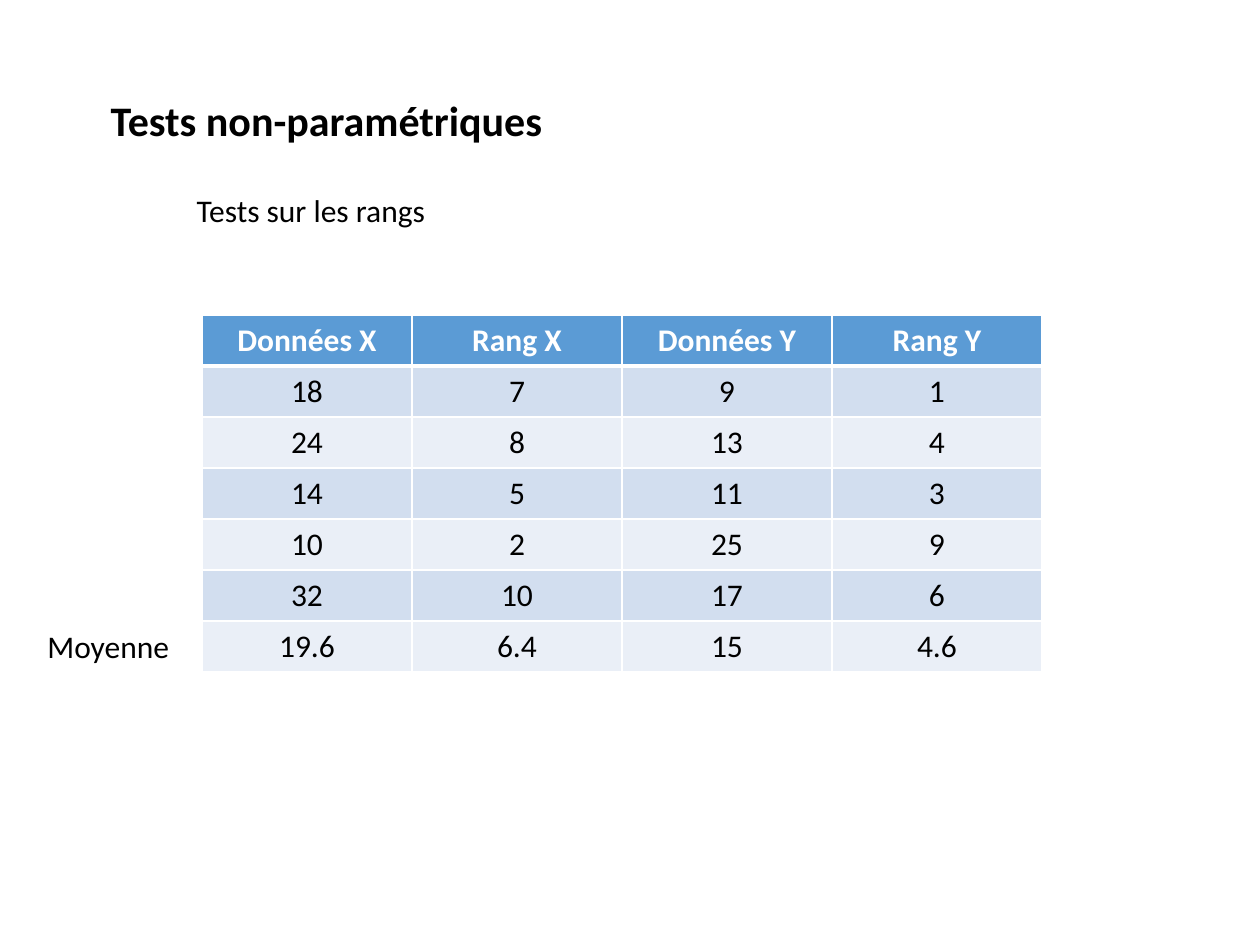
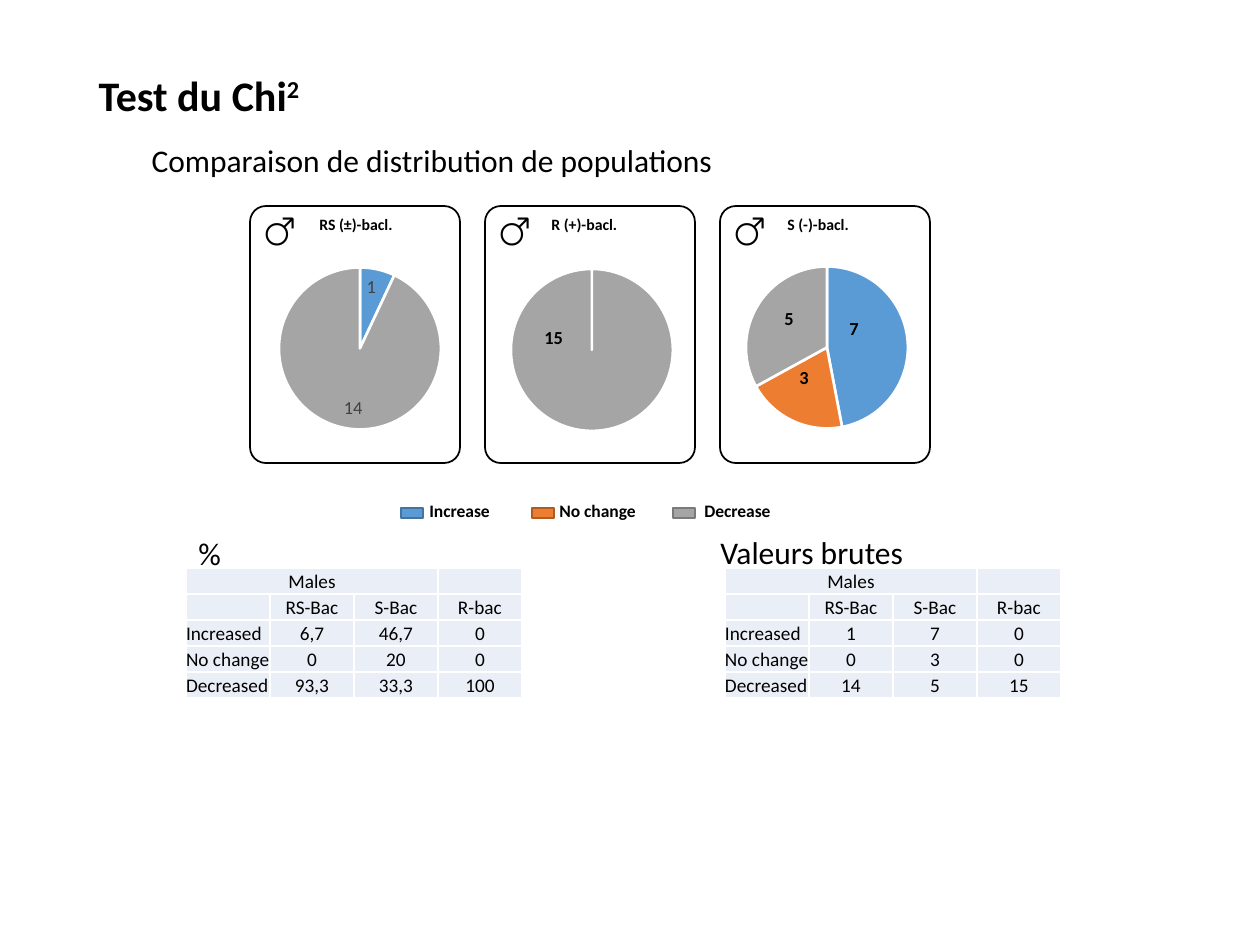
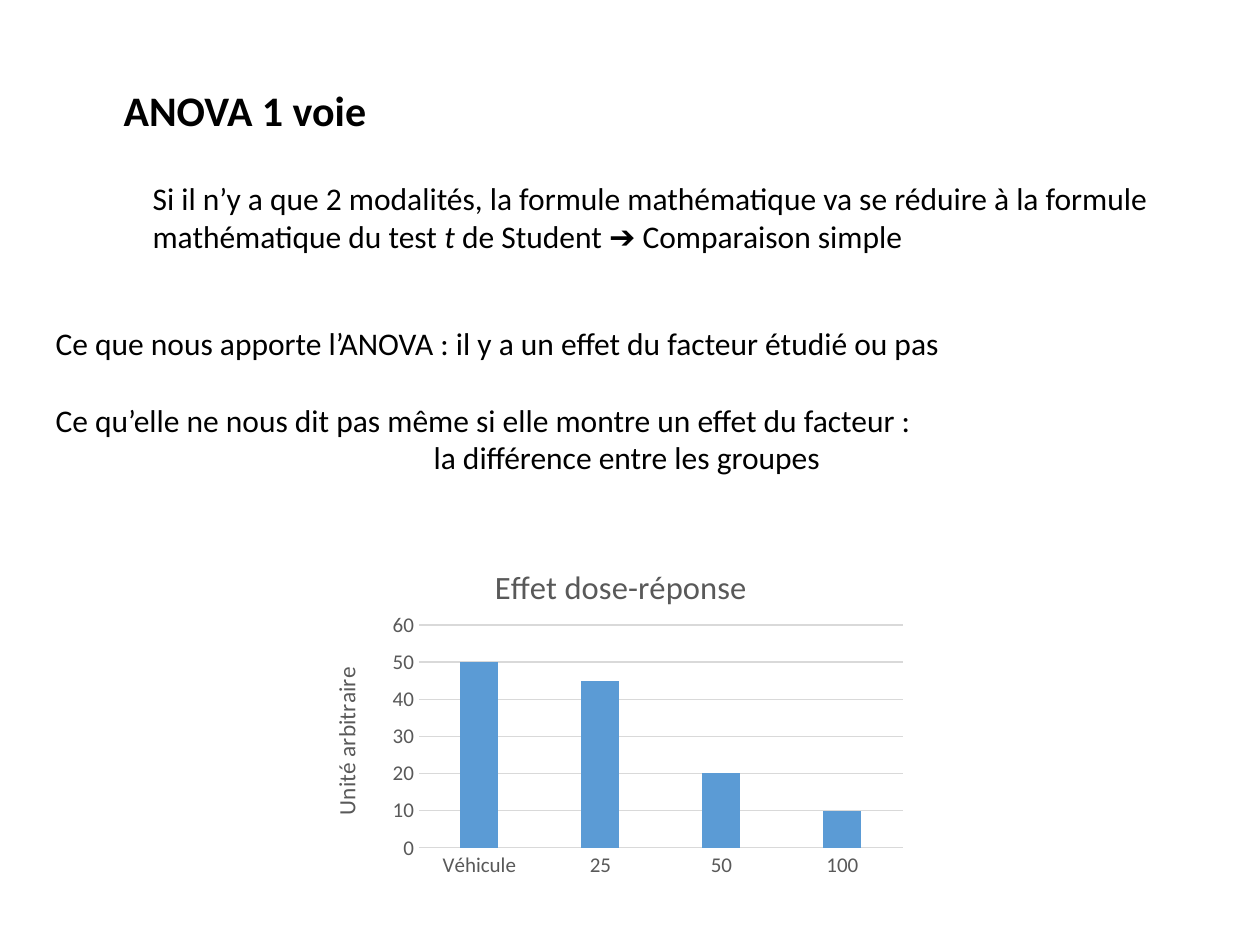
from collections import namedtuple

from lxml import etree
from pptx import Presentation
from pptx import util as u
from pptx.chart.data import CategoryChartData
from pptx.dml.color import RGBColor
from pptx.enum import chart as charts, shapes, text
from pptx.oxml.ns import qn

COLORS = {
    "black": "000000", "white": "FFFFFF", "blue": "5B9BD5", "orange": "ED7D31",
    "gray": "A5A5A5", "blue_edge": "43739E", "orange_edge": "AF5C24",
    "gray_edge": "7A7A7A", "band_dark": "D2DEEF", "band_light": "EAEFF7",
    "axis": "595959", "grid": "D9D9D9", "label": "404040",
}
FONT = "Calibri"
PX_PER_INCH = 126
ONE_CONTENT, TWO_CONTENT = 1, 3

Box = namedtuple("Box", "left top width height")


def px(length):
    return u.Emu(round(length * 914400 / PX_PER_INCH))


def place(box):
    return [px(length) for length in box]


def inside(box, left, top, width, height):
    return Box(box.left + left, box.top + top, width, height)


def rgb(name):
    return RGBColor.from_string(COLORS[name])


def style_font(font, size, color="black", bold=False, italic=False):
    font.name, font.size = FONT, u.Pt(size)
    font.bold, font.italic = bold, italic
    font.color.rgb = rgb(color)


def write_para(para, content, size=18, color="black", bold=False, align="LEFT",
               indent=0, before=0):
    """Fill a paragraph from a string or a list of (text, style) pairs."""
    para.alignment = text.PP_ALIGN[align]
    para.space_before = u.Pt(before)
    props = para._p.get_or_add_pPr()
    props.set("marL", str(px(indent)))
    props.set("indent", "0")
    etree.SubElement(props, qn("a:buNone"))
    spans = [(content, "")] if isinstance(content, str) else content
    for words, style in spans:
        span = para.add_run()
        span.text = words
        style_font(span.font, size, color, bold, style == "italic")
        if style == "super":
            span._r.get_or_add_rPr().set("baseline", "30000")


def write_box(shape, box, content, wrap=False, **style):
    """Move a text shape and write one paragraph in it."""
    shape.left, shape.top, shape.width, shape.height = place(box)
    frame = shape.text_frame
    frame.word_wrap = wrap
    frame.auto_size = text.MSO_AUTO_SIZE.SHAPE_TO_FIT_TEXT
    frame.vertical_anchor = text.MSO_ANCHOR.TOP
    write_para(frame.paragraphs[0], content, **style)
    return frame


def add_label(page, box, content, **style):
    return write_box(page.shapes.add_textbox(*place(box)), box, content, **style)


def add_page(deck, layout, title_box, title):
    page = deck.slides.add_slide(deck.slide_layouts[layout])
    write_box(page.shapes.title, title_box, title, size=24, bold=True)
    return page


def add_outline(page, kind, box, fill, line):
    shape = page.shapes.add_shape(kind, *place(box))
    shape.shadow.inherit = False
    shape.fill.solid()
    shape.fill.fore_color.rgb = rgb(fill)
    shape.line.color.rgb = rgb(line)
    shape.line.width = u.Pt(1)
    return shape


# Tables

def set_borders(cell, bottom):
    props = cell._tc.get_or_add_tcPr()
    widths = {"lnL": 1, "lnR": 1, "lnT": 1, "lnB": bottom}
    for position, (side, width) in enumerate(widths.items()):
        line = etree.Element(qn("a:" + side), w=str(u.Pt(width)))
        fill = etree.SubElement(line, qn("a:solidFill"))
        etree.SubElement(fill, qn("a:srgbClr"), val=COLORS["white"])
        props.insert(position, line)


def format_cell(cell, content, fill, bottom=1, size=18, **style):
    cell.fill.solid()
    cell.fill.fore_color.rgb = rgb(fill)
    set_borders(cell, bottom)
    para = cell.text_frame.paragraphs[0]
    if content:
        write_para(para, content, size=size, **style)
    else:
        etree.SubElement(para._p, qn("a:endParaRPr"), sz=str(size * 100))


def new_table(page, left, top, column, row, rows):
    box = Box(left, top, column * len(rows[0]), row * len(rows))
    table = page.shapes.add_table(len(rows), len(rows[0]), *place(box)).table
    for part in table.columns:
        part.width = px(column)
    for part in table.rows:
        part.height = px(row)
    return table


def add_rank_table(page, left, top, rows):
    table = new_table(page, left, top, 210, 51, rows)
    for r, row in enumerate(rows):
        for c, value in enumerate(row):
            if r == 0:
                style = dict(fill="blue", bottom=3, color="white", bold=True)
            else:
                style = dict(fill="band_dark" if r % 2 else "band_light")
            format_cell(table.cell(r, c), value, align="CENTER", **style)


def add_male_table(page, left, top, values):
    rows = [["Males", "", "", ""], ["", "RS-Bac", "S-Bac", "R-bac"]]
    names = ["Increased", "No change", "Decreased"]
    rows += [[name, *numbers] for name, numbers in zip(names, values)]
    table = new_table(page, left, top, 84, 26, rows)
    for r, row in enumerate(rows):
        for c, value in enumerate(row):
            cell = table.cell(r, c)
            cell.margin_left = cell.margin_right = 0
            cell.margin_top = cell.margin_bottom = 0
            cell.vertical_anchor = text.MSO_ANCHOR.BOTTOM
            format_cell(cell, value, "band_light", size=11,
                        align="LEFT" if r > 1 and c == 0 else "CENTER")
    table.cell(0, 0).merge(table.cell(0, 2))


# Charts

def set_layout(parent, index, chart_box, left, top, width=None, height=None):
    """Fix the place of a plot area or title, in px within its chart."""
    for old in parent.findall(qn("c:layout")):
        parent.remove(old)
    layout = etree.Element(qn("c:layout"))
    manual = etree.SubElement(layout, qn("c:manualLayout"))
    entries = {"xMode": "edge", "yMode": "edge",
               "x": left / chart_box.width, "y": top / chart_box.height}
    if width:
        etree.SubElement(manual, qn("c:layoutTarget"), val="inner")
        entries.update(w=width / chart_box.width, h=height / chart_box.height)
    for tag, value in entries.items():
        etree.SubElement(manual, qn("c:" + tag), val=str(value))
    parent.insert(index, layout)


def new_chart(page, kind, box, categories, values, plot):
    data = CategoryChartData()
    data.categories = categories
    data.add_series("Series 1", values)
    chart = page.shapes.add_chart(kind, *place(box), data).chart
    chart.has_legend = chart.has_title = False
    style_font(chart.font, 10)
    props = etree.Element(qn("c:spPr"))
    etree.SubElement(props, qn("a:noFill"))
    etree.SubElement(etree.SubElement(props, qn("a:ln")), qn("a:noFill"))
    chart.element.find(qn("c:chart")).addnext(props)
    set_layout(chart.element.find(".//" + qn("c:plotArea")), 0, box, *plot)
    return chart


def add_pie(page, box, values, labels):
    size = 162
    plot = ((box.width - size) / 2, (box.height - size) / 2, size, size)
    chart = new_chart(page, charts.XL_CHART_TYPE.PIE, box, ["1", "2", "3"],
                      values, plot)
    chart.plots[0].vary_by_categories = True
    series = chart.plots[0].series[0]
    for i, color in enumerate(["blue", "orange", "gray"]):
        point = series.points[i]
        point.format.fill.solid()
        point.format.fill.fore_color.rgb = rgb(color)
        point.format.line.color.rgb = rgb("white")
        point.format.line.width = u.Pt(1.5)
    for i, words in labels.items():
        label = series.points[i].data_label
        span = label.text_frame.paragraphs[0].add_run()
        span.text = words
        style_font(span.font, 10.5, "label")
        label.position = charts.XL_LABEL_POSITION.INSIDE_END


def write_chart_title(title, words, size, chart_box, left, top):
    span = title.text_frame.paragraphs[0].add_run()
    span.text = words
    style_font(span.font, size, "axis")
    set_layout(title.element, 1, chart_box, left, top)


def add_dose_chart(page, box):
    chart = new_chart(page, charts.XL_CHART_TYPE.COLUMN_CLUSTERED, box,
                      ["Véhicule", "25", "50", "100"], [50, 45, 20, 10],
                      (103, 87, 484, 223))
    chart.has_title = True
    write_chart_title(chart.chart_title, "Effet dose-réponse", 18.6, box, 173, 20)
    bars = chart.plots[0]
    bars.vary_by_categories = False
    bars.gap_width, bars.overlap = 219, -27
    bars.series[0].format.fill.solid()
    bars.series[0].format.fill.fore_color.rgb = rgb("blue")

    doses, scale = chart.category_axis, chart.value_axis
    for axis in (doses, scale):
        axis.major_tick_mark = axis.minor_tick_mark = charts.XL_TICK_MARK.NONE
        style_font(axis.tick_labels.font, 12, "axis")
    scale.minimum_scale, scale.maximum_scale, scale.major_unit = 0, 60, 10
    scale.format.line.fill.background()
    for line in (doses.format.line, scale.major_gridlines.format.line):
        line.color.rgb = rgb("grid")
        line.width = u.Pt(0.75)
    title = scale.axis_title
    write_chart_title(title, "Unité arbitraire", 13.3, box, 10, 125)
    turn = title.element.find(".//" + qn("a:bodyPr"))
    turn.set("rot", "-5400000")
    turn.set("vert", "horz")


# Regions of the distribution slide

def add_card(page, box, name, name_left, pie, values, labels, notes):
    card = add_outline(page, shapes.MSO_SHAPE.ROUNDED_RECTANGLE, box,
                       "white", "black")
    card.adjustments[0] = 0.075
    add_pie(page, inside(box, *pie), values, labels)
    add_label(page, inside(box, name_left, 3, 140, 53), name, size=9, bold=True)
    add_label(page, inside(box, 2, -4, 74, 92), "♂", size=20, bold=True)
    for words, left, top in notes:
        add_label(page, inside(box, left, top, 36 + 15 * len(words), 58), words,
                  size=10.5, bold=True)


def add_legend(page, box):
    entries = [("Increase", "blue", 0, 16), ("No change", "orange", 131, 15),
               ("Decrease", "gray", 272, 19)]
    for name, color, left, gap in entries:
        add_outline(page, shapes.MSO_SHAPE.RECTANGLE,
                    inside(box, left, 14, 22, 10), color, color + "_edge")
        add_label(page, inside(box, left + gap, 0, 103, box.height), name,
                  size=10, bold=True)


# Slides

def build_ranks(deck):
    page = add_page(deck, ONE_CONTENT, Box(98, 88, 462, 63),
                    "Tests non-paramétriques")
    write_box(page.placeholders[1], Box(184, 185, 257, 50), "Tests sur les rangs")
    add_rank_table(page, 202, 315, [
        ["Données X", "Rang X", "Données Y", "Rang Y"],
        ["18", "7", "9", "1"],
        ["24", "8", "13", "4"],
        ["14", "5", "11", "3"],
        ["10", "2", "25", "9"],
        ["32", "10", "17", "6"],
        ["19.6", "6.4", "15", "4.6"],
    ])
    add_label(page, Box(35, 621, 149, 50), "Moyenne")


def build_distribution(deck):
    page = add_page(deck, ONE_CONTENT, Box(86, 63, 231, 63),
                    [("Test du Chi", ""), ("2", "super")])
    write_box(page.placeholders[1], Box(139, 135, 593, 50),
              "Comparaison de distribution de populations")
    cards = [
        ("RS (±)-bacl.", 57, (-63, 43, 346, 199), [7, 0, 93],
         {0: "1", 2: "14"}, []),
        ("R (+)-bacl.", 54, (-41, 45, 296, 198), [0, 0, 100], {},
         [("15", 47, 114)]),
        ("S (-)-bacl.", 55, (-41, 43, 296, 197), [47, 20, 33], {},
         [("7", 117, 105), ("3", 67, 154), ("5", 52, 95)]),
    ]
    for i, card in enumerate(cards):
        add_card(page, Box(250 + 235 * i, 206, 210, 257), *card)
    add_legend(page, Box(401, 494, 391, 34))

    add_label(page, Box(186, 528, 48, 50), "%")
    add_male_table(page, 186, 568, [["6,7", "46,7", "0"], ["0", "20", "0"],
                                    ["93,3", "33,3", "100"]])
    add_label(page, Box(708, 527, 210, 50), "Valeurs brutes")
    add_male_table(page, 725, 568, [["1", "7", "0"], ["0", "3", "0"],
                                    ["14", "5", "15"]])


def build_anova(deck):
    page = add_page(deck, TWO_CONTENT, Box(111, 78, 270, 63), "ANOVA 1 voie")
    write_box(page.placeholders[1], Box(140, 173, 1034, 89), [
        ("Si il n’y a que 2 modalités, la formule mathématique va se réduire "
         "à la formule mathématique du test ", ""),
        ("t", "italic"),
        (" de Student ➔ Comparaison simple", ""),
    ], wrap=True)
    frame = write_box(
        page.placeholders[2], Box(43, 318, 1133, 165),
        "Ce que nous apporte l’ANOVA : il y a un effet du facteur étudié ou pas",
        wrap=True)
    write_para(frame.add_paragraph(),
               "Ce qu’elle ne nous dit pas même si elle montre un effet du facteur :",
               before=22)
    write_para(frame.add_paragraph(), "la différence entre les groupes", indent=378)
    add_dose_chart(page, Box(316, 538, 598, 346))


def main():
    deck = Presentation()
    deck.slide_width, deck.slide_height = px(1260), px(945)
    build_ranks(deck)
    build_distribution(deck)
    build_anova(deck)
    deck.save("out.pptx")


if __name__ == "__main__":
    main()
